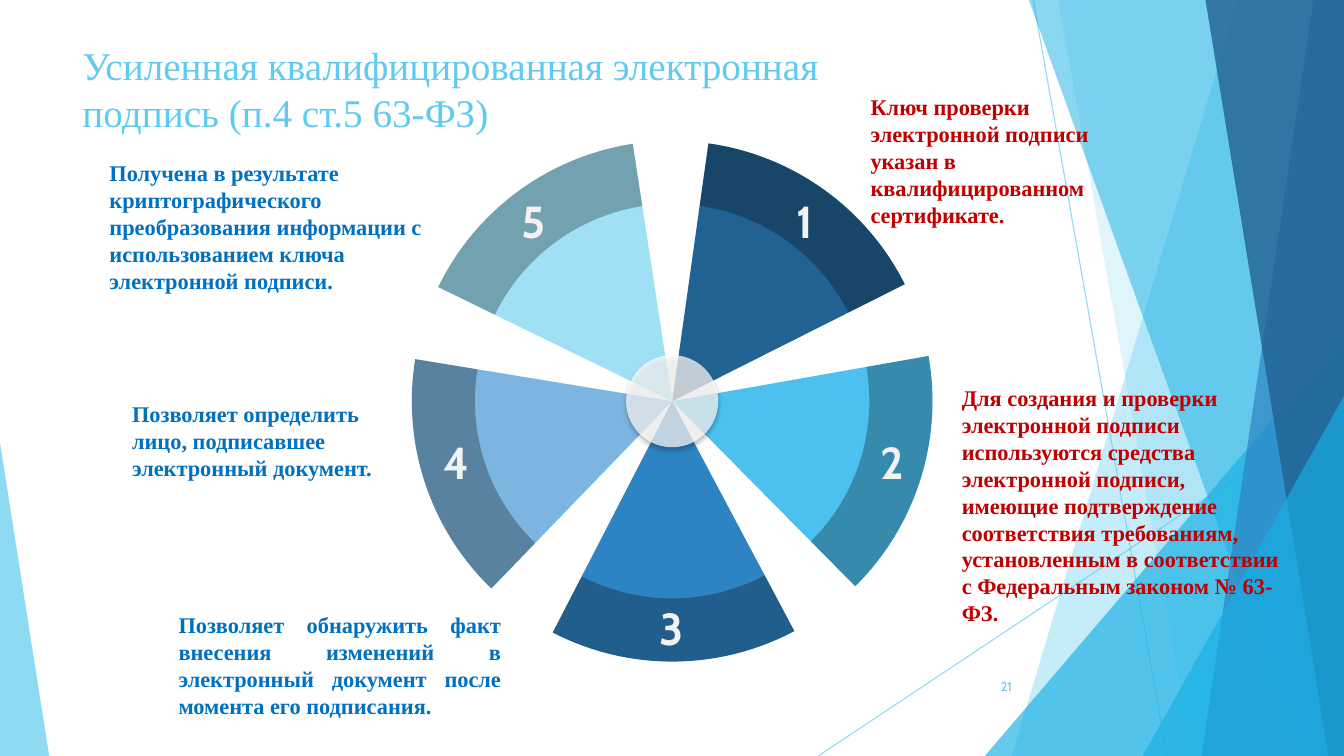
from math import cos, radians, sin, tan
from lxml.etree import SubElement
from pptx import Presentation
from pptx.dml.color import RGBColor
from pptx.enum.shapes import MSO_CONNECTOR, MSO_SHAPE
from pptx.enum.text import MSO_ANCHOR, PP_ALIGN
from pptx.oxml.ns import qn
from pptx.util import Cm, Pt

TITLE = "Усиленная квалифицированная электронная подпись (п.4 ст.5 63-ФЗ)"
PAGE = "21"

NOTES = [
    ("Ключ проверки электронной подписи указан в квалифицированном сертификате.",
     (21.94, 2.23, 6.88, 3.68), "red", PP_ALIGN.LEFT),
    ("Получена в результате криптографического преобразования информации "
     "с использованием ключа электронной подписи.",
     (2.76, 3.89, 8.13, 3.68), "blue", PP_ALIGN.LEFT),
    ("Позволяет определить лицо, подписавшее электронный документ.",
     (3.33, 9.96, 6.22, 2.31), "blue", PP_ALIGN.LEFT),
    ("Для создания и проверки электронной подписи используются средства "
     "электронной подписи, имеющие подтверждение соответствия требованиям, "
     "установленным в соответствии с Федеральным законом № 63-ФЗ.",
     (24.24, 9.56, 8.13, 6.4), "red", PP_ALIGN.LEFT),
    ("Позволяет обнаружить факт внесения изменений в электронный документ "
     "после момента его подписания.",
     (4.5, 15.28, 8.13, 3), "blue", PP_ALIGN.JUSTIFY),
]

WEDGES = [
    ("1", "226292", (20.28, 5.56)),
    ("2", "4CC1EF", (22.49, 11.63)),
    ("3", "2E83C3", (16.92, 15.82)),
    ("4", "7CB5E0", (11.47, 11.63)),
    ("5", "9FE0F5", (13.45, 5.56)),
]

THEME = {
    "sky": "5FCBEF", "cyan": "17B0E4", "mid": "2E83C3", "navy": "226292",
    "red": "C00000", "blue": "0070C0", "white": "FFFFFF", "black": "000000",
    "digit": "F2F2F2", "serif": "Times New Roman", "sans": "Cabin",
    "head": 28, "body": 16, "num": 32, "page": 9,
}

WIDE, HIGH = 33.87, 19.05
RAYS = [((26.04, 0), (29.41, HIGH)), ((WIDE, 10.24), (20.62, HIGH))]
DECOR = [
    ("band", (31.19, 25.5), "sky", 36),
    ("band", (26.67, 30.05), "sky", 20),
    ("peak", (24.82, 8.46, WIDE, 1), "cyan", 66),
    ("band", (25.93, 32.79), "cyan", 50),
    ("band", (33.1, 30.28), "mid", 70),
    ("band", (30.38, 33.48), "navy", 80),
    ("peak", (28.8, 9.98, WIDE, 1), "cyan", 66),
    ("peak", (0, 11.15, 1.24, 0), "sky", 70),
]

MIDX, MIDY = 16.94, 10.11
OUTER, INNER, HUB = 6.56, 4.97, 1.16
FIRST, SPAN = 8, 55.3

deck = Presentation()
deck.slide_width, deck.slide_height = Cm(WIDE), Cm(HIGH)
slide = deck.slides.add_slide(deck.slide_layouts[6])
shapes = slide.shapes


def fade(fill, alpha):
    color = fill._xPr.find(".//" + qn("a:srgbClr"))
    SubElement(color, qn("a:alpha")).set("val", str(alpha * 1000))


def paint(shape, color, alpha=100):
    shape.shadow.inherit = False
    shape.fill.solid()
    shape.fill.fore_color.rgb = RGBColor.from_string(color)
    shape.line.fill.background()
    if alpha < 100:
        fade(shape.fill, alpha)
    return shape


def outline(points, color, alpha=100):
    track = [(Cm(x), Cm(y)) for x, y in points]
    pen = shapes.build_freeform(*track[0])
    pen.add_line_segments(track[1:], close=True)
    return paint(pen.convert_to_shape(), color, alpha)


def bend(shape, arcs):
    steps = list(shape._element.spPr.find(".//" + qn("a:path")))
    for i in range(arcs):
        first, *rest = steps[4 * i + 1:4 * i + 4]
        first.tag = qn("a:cubicBezTo")
        for step in rest:
            first.append(step[0])
            step.getparent().remove(step)


def disc(radius, alpha):
    oval = shapes.add_shape(MSO_SHAPE.OVAL, Cm(MIDX - radius), Cm(MIDY - radius),
                            Cm(2 * radius), Cm(2 * radius))
    return paint(oval, THEME["white"], alpha)


def arc(radius, start):
    a, b = radians(start), radians(start + SPAN)
    pull = radius * 4 / 3 * tan((b - a) / 4)
    spots = [(a, 0), (a, pull), (b, -pull), (b, 0)]
    return [(MIDX + radius * sin(t) + p * cos(t), MIDY - radius * cos(t) + p * sin(t))
            for t, p in spots]


def write(text, box, size, color, font="serif", bold=True, align=PP_ALIGN.LEFT,
          anchor=MSO_ANCHOR.TOP, inset=0.25, wrap=True):
    frame = shapes.add_textbox(*map(Cm, box)).text_frame
    frame.word_wrap = wrap
    frame.vertical_anchor = anchor
    frame.margin_left = frame.margin_right = Cm(inset)
    line = frame.paragraphs[0]
    line.text = text
    line.alignment = align
    line.font.size = Pt(THEME[size])
    line.font.name = THEME[font]
    line.font.bold = bold
    line.font.color.rgb = RGBColor.from_string(THEME[color])


def draw_decor():
    for (x1, y1), (x2, y2) in RAYS:
        ray = shapes.add_connector(MSO_CONNECTOR.STRAIGHT, Cm(x1), Cm(y1), Cm(x2), Cm(y2))
        ray.line.width = Pt(0.75)
        ray.line.color.rgb = RGBColor.from_string(THEME["sky"])
        fade(ray.line.fill, 70)
        SubElement(ray._element.spPr, qn("a:effectLst"))
    for kind, place, color, alpha in DECOR:
        if kind == "band":
            top, base = place
            outline([(top, 0), (WIDE, 0), (WIDE, HIGH), (base, HIGH)], THEME[color], alpha)
        else:
            left, top, right, tip = place
            peak = shapes.add_shape(MSO_SHAPE.ISOSCELES_TRIANGLE, Cm(left), Cm(top),
                                    Cm(right - left), Cm(HIGH - top))
            peak.adjustments[0] = tip
            paint(peak, THEME[color], alpha)


def draw_wheel():
    disc(INNER, 58)
    starts = [FIRST + 360 / len(WEDGES) * i for i in range(len(WEDGES))]
    for start, (_, color, _) in zip(starts, WEDGES):
        bend(outline(arc(OUTER, start) + [(MIDX, MIDY)], color), 1)
    for start in starts:
        rim = arc(OUTER, start) + arc(INNER, start)[::-1]
        bend(outline(rim, THEME["black"], 28), 2)


def draw_hub():
    hub = disc(HUB, 72)
    glow = SubElement(hub._element.spPr.find(qn("a:effectLst")), qn("a:outerShdw"),
                      blurRad=str(Pt(3.5)), dist=str(Pt(2.2)), dir="5400000",
                      algn="t", rotWithShape="0")
    tint = SubElement(glow, qn("a:srgbClr"), val=THEME["black"])
    SubElement(tint, qn("a:alpha"), val="32000")


draw_decor()
write(TITLE, (1.83, 0.91, 19.69, 3.66), "head", "sky", bold=False)
draw_wheel()
for text, box, color, align in NOTES:
    write(text, box, "body", color, align=align, inset=0)
for digit, _, (x, y) in WEDGES:
    write(digit, (x - 0.55, y - 0.81, 1.1, 1.62), "num", "digit", "sans",
          align=PP_ALIGN.CENTER, anchor=MSO_ANCHOR.MIDDLE, wrap=False)
draw_hub()
write(PAGE, (23.85, 16.79, 1.9, 1.02), "page", "sky", "sans", bold=False,
      align=PP_ALIGN.RIGHT, anchor=MSO_ANCHOR.MIDDLE)
deck.save("out.pptx")
